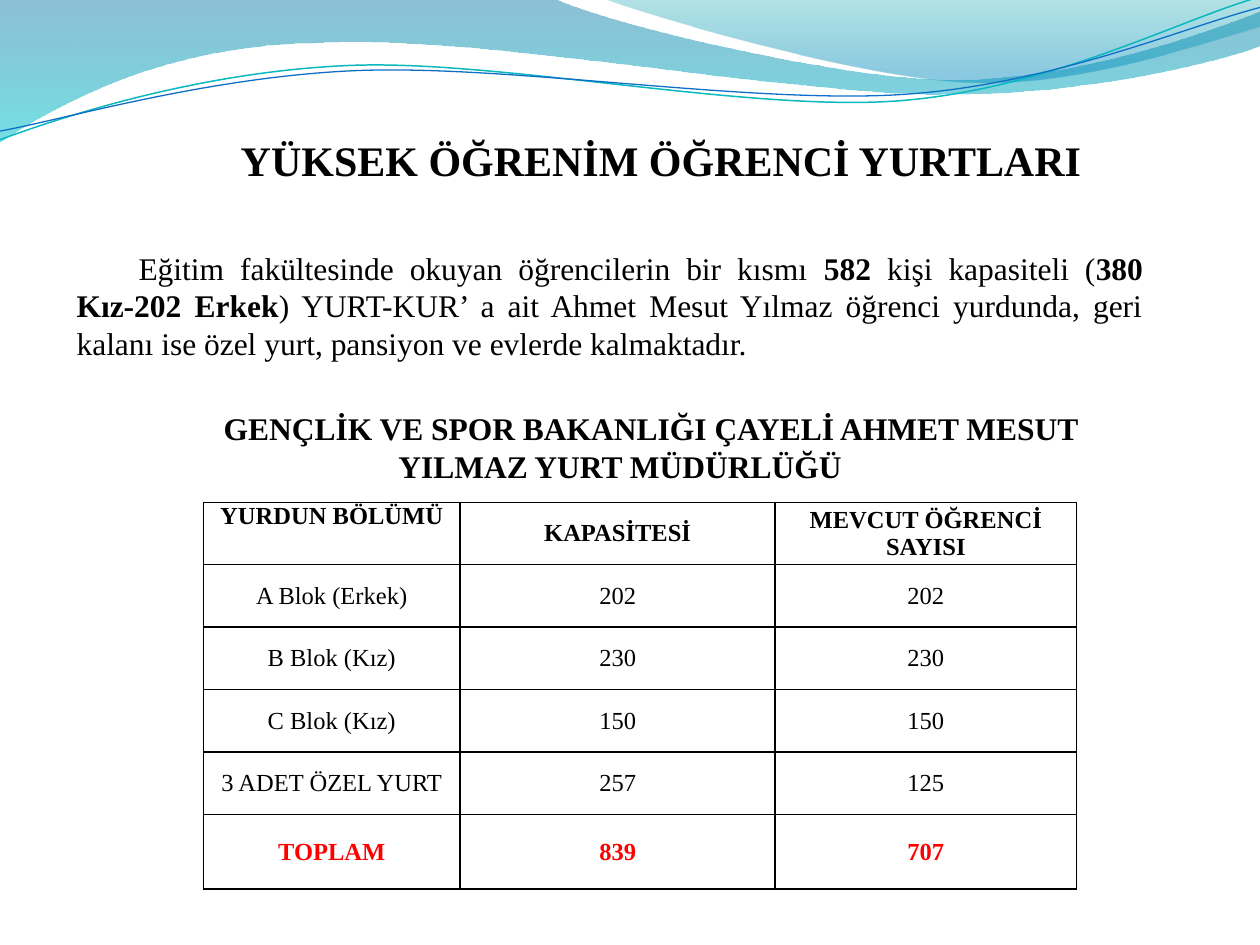
from dataclasses import dataclass

from lxml import etree
from pptx import Presentation
from pptx.dml.color import RGBColor
from pptx.enum.text import MSO_ANCHOR, PP_ALIGN
from pptx.oxml.ns import qn
from pptx.util import Pt

CENTER, JUSTIFY = PP_ALIGN.CENTER, PP_ALIGN.JUSTIFY
TOP, MIDDLE = MSO_ANCHOR.TOP, MSO_ANCHOR.MIDDLE
TITLE_ONLY = 5
CURVE_ROTATION = 357.3


@dataclass(frozen=True)
class Theme:
    font: str = "Times New Roman"
    title_size: int = 24
    body_size: int = 18
    table_size: int = 14
    ink: str = "000000"
    total: str = "FF0000"
    teal_line: str = "0AB8BF"
    blue_line: str = "0F6FC6"
    # Gradient stops: position, colour, opacity in percent
    left_wave: tuple = ((0, "0074A1", 45), (1, "00C6CF", 55))
    right_wave: tuple = ((0, "00A1A9", 30), (0.8, "008BBF", 45))


THEME = Theme()

# Each segment holds one point (straight line) or three points (Bézier curve).
LEFT_WAVE = [
    [(0, -0.7)], [(316.8, -0.7)],
    [(342.7, 12.2), (478.1, 45.4), (545.8, 45.4)],
    [(614.2, 45.4), (689.8, 18.7), (720, 6.5)],
    [(720.7, 25.9)],
    [(707.8, 31.7), (626.4, 54.7), (537.1, 54)],
    [(447.8, 54), (275, 20.2), (185, 24.5)],
    [(92.9, 25.2), (33.1, 59.8), (-0.7, 81.4)],
    [(0, -0.7)],
]
RIGHT_WAVE = [
    [(344.9, -0.7)],
    [(366.5, 7.9), (491, 44.6), (553.7, 46.8)],
    [(616.3, 49.7), (691.9, 23), (720, 15.1)],
    [(720, 0)], [(344.9, -0.7)],
]
TEAL_CURVE = [
    [(-1.4, 62.9)],
    [(33.7, 51.7), (114, 29.4), (199.8, 29.9)],
    [(284.8, 30.3), (425.8, 67.2), (512.4, 64.9)],
    [(599, 62.4), (676.4, 25.7), (720.2, 15.6)],
]
BLUE_CURVE = [
    [(-1.2, 57.9)],
    [(32.9, 53.7), (118.3, 32.5), (204, 33)],
    [(290.5, 33.5), (429, 63), (515.5, 61.3)],
    [(601.4, 59.7), (678.5, 30.1), (721.4, 21.3)],
]

DORM_ROWS = [
    ("YURDUN BÖLÜMÜ", "KAPASİTESİ", "MEVCUT ÖĞRENCİ SAYISI"),
    ("A Blok (Erkek)", "202", "202"),
    ("B Blok (Kız)", "230", "230"),
    ("C Blok (Kız)", "150", "150"),
    ("3 ADET ÖZEL YURT", "257", "125"),
    ("TOPLAM", "839", "707"),
]
COLUMN_WIDTHS = (146.8, 180, 172.2)
ROW_HEIGHT, TOTAL_HEIGHT = 35.7, 42.6

DORM_TEXT = [
    ("Eğitim fakültesinde okuyan öğrencilerin bir kısmı ", False),
    ("582 ", True),
    ("kişi kapasiteli (", False),
    ("380 Kız-202 Erkek", True),
    (") YURT-KUR’ a ait Ahmet Mesut Yılmaz öğrenci yurdunda, geri kalanı "
     "ise özel yurt, pansiyon ve evlerde kalmaktadır.", False),
]


def add_outline(slide, outline, close):
    """Draw the outline, with its three-point segments as Bézier curves."""
    points = [(Pt(x), Pt(y)) for segment in outline for x, y in segment]
    builder = slide.shapes.build_freeform(*points[0])
    builder.add_line_segments(points[1:], close=close)
    shape = builder.convert_to_shape()
    shape.shadow.inherit = False
    lines = iter(list(shape._element.spPr.iter(qn("a:lnTo"))))
    for segment in outline[1:]:
        parts = [next(lines) for _ in segment]
        if len(parts) == 3:
            parts[0].addprevious(curve := etree.Element(qn("a:cubicBezTo")))
            for part in parts:
                curve.append(part[0])
                part.getparent().remove(part)
    return shape


def add_wave(slide, outline, stops):
    wave = add_outline(slide, outline, close=True)
    wave.line.fill.background()
    wave.fill.gradient()
    wave.fill.gradient_angle = 270
    for gradient_stop, (position, color, _) in zip(wave.fill.gradient_stops, stops):
        gradient_stop.position = position
        gradient_stop.color.rgb = RGBColor.from_string(color)
    colors = wave._element.spPr.iter(qn("a:srgbClr"))
    for color, (_, _, opacity) in zip(list(colors), stops):
        etree.SubElement(color, qn("a:alpha"), val=str(opacity * 1000))


def add_curve(slide, outline, color, width):
    curve = add_outline(slide, outline, close=False)
    curve.rotation = CURVE_ROTATION
    curve.fill.background()
    curve.line.color.rgb = RGBColor.from_string(color)
    curve.line.width = Pt(width)


def format_paragraph(paragraph, size, align, color=THEME.ink, bold=None):
    paragraph.alignment = align
    paragraph.font.name = THEME.font
    paragraph.font.size = Pt(size)
    paragraph.font.color.rgb = RGBColor.from_string(color)
    paragraph.font.bold = bold


def fill_text(shape, runs, size, align, bold=None):
    """Write one paragraph with an indented first line."""
    frame = shape.text_frame
    frame.word_wrap = True
    frame.vertical_anchor = TOP
    paragraph = frame.paragraphs[0]
    for text, run_bold in runs:
        run = paragraph.add_run()
        run.text = text
        if bold is None:
            run.font.bold = run_bold
    paragraph._p.get_or_add_pPr().set("indent", str(Pt(35.4)))
    format_paragraph(paragraph, size, align, bold=bold)


def add_text(slide, box, runs, align, bold=None):
    shape = slide.shapes.add_textbox(*map(Pt, box))
    fill_text(shape, runs, THEME.body_size, align, bold)


def set_title(slide, text):
    title = slide.shapes.title
    title.left, title.top, title.width, title.height = map(Pt, (93.6, 73.4, 532.8, 36))
    fill_text(title, [(text, True)], THEME.title_size, CENTER, bold=True)


def border_cell(cell):
    properties = cell._tc.get_or_add_tcPr()
    for index, side in enumerate(("lnL", "lnR", "lnT", "lnB")):
        line = etree.Element(qn(f"a:{side}"), w=str(Pt(1)))
        fill = etree.SubElement(line, qn("a:solidFill"))
        etree.SubElement(fill, qn("a:srgbClr"), val=THEME.ink)
        properties.insert(index, line)


def add_dorm_table(slide):
    last = len(DORM_ROWS) - 1
    heights = [ROW_HEIGHT] * last + [TOTAL_HEIGHT]
    table = slide.shapes.add_table(
        len(DORM_ROWS), len(COLUMN_WIDTHS), Pt(116.2), Pt(287),
        Pt(sum(COLUMN_WIDTHS)), Pt(sum(heights))).table
    table.first_row = table.horz_banding = False
    for column, width in zip(table.columns, COLUMN_WIDTHS):
        column.width = Pt(width)
    for r, (values, height) in enumerate(zip(DORM_ROWS, heights)):
        table.rows[r].height = Pt(height)
        for c, value in enumerate(values):
            cell = table.cell(r, c)
            cell.text = value
            cell.fill.background()
            cell.margin_left = cell.margin_right = Pt(3.6)
            cell.margin_top = cell.margin_bottom = 0
            cell.vertical_anchor = TOP if r == c == 0 else MIDDLE
            format_paragraph(cell.text_frame.paragraphs[0], THEME.table_size,
                             CENTER, THEME.total if r == last else THEME.ink,
                             bold=r in (0, last))
            border_cell(cell)


def main():
    deck = Presentation()
    deck.slide_width, deck.slide_height = Pt(720), Pt(540)
    slide = deck.slides.add_slide(deck.slide_layouts[TITLE_ONLY])
    add_wave(slide, LEFT_WAVE, THEME.left_wave)
    add_wave(slide, RIGHT_WAVE, THEME.right_wave)
    add_curve(slide, TEAL_CURVE, THEME.teal_line, 0.85)
    add_curve(slide, BLUE_CURVE, THEME.blue_line, 0.75)
    set_title(slide, "YÜKSEK ÖĞRENİM ÖĞRENCİ YURTLARI")
    add_text(slide, (36.7, 138.5, 623.5, 113.8), DORM_TEXT, JUSTIFY)
    add_text(slide, (70.6, 230.4, 567.4, 72.7),
             [("GENÇLİK VE SPOR BAKANLIĞI ÇAYELİ AHMET MESUT "
               "YILMAZ YURT MÜDÜRLÜĞÜ", True)], CENTER, bold=True)
    add_dorm_table(slide)
    deck.save("out.pptx")


if __name__ == "__main__":
    main()
